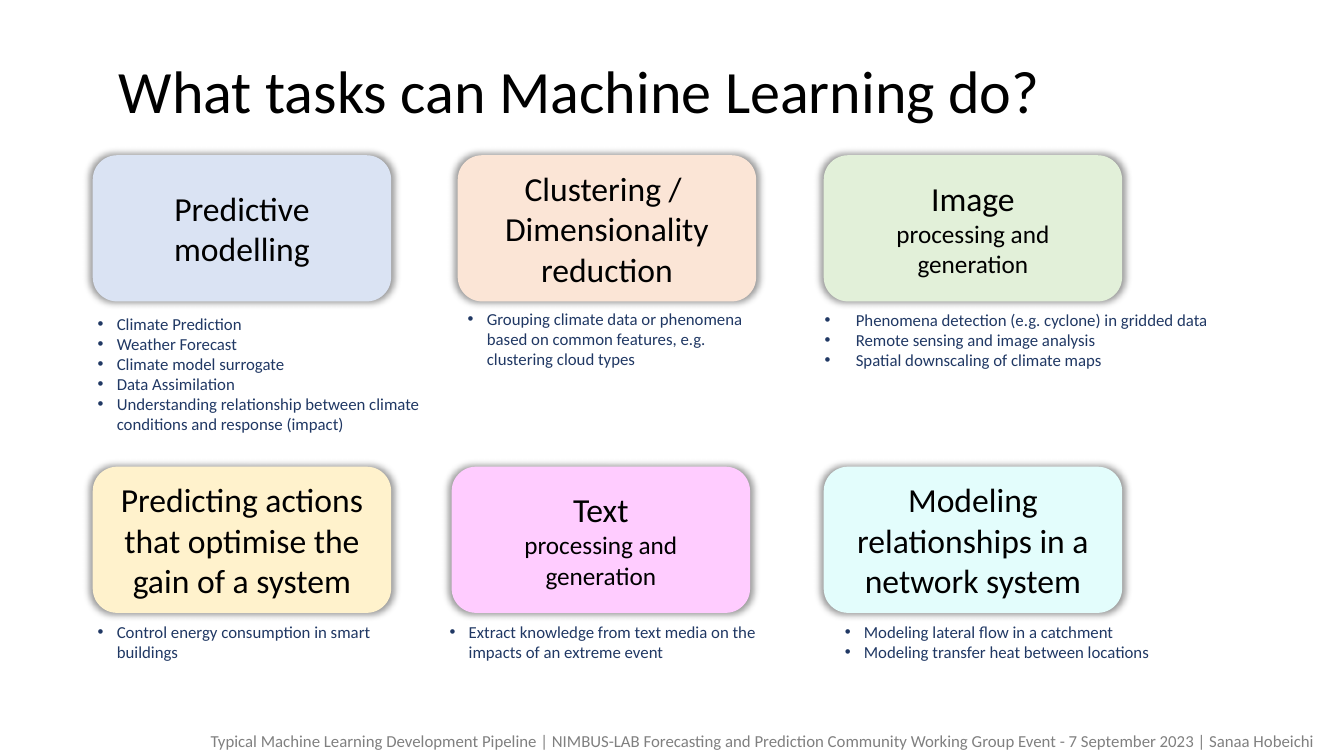
"""Build the slide on the tasks that machine learning can do."""
from dataclasses import dataclass

from lxml.etree import SubElement
from pptx import Presentation
from pptx.dml.color import RGBColor
from pptx.enum.shapes import MSO_SHAPE
from pptx.enum.text import MSO_ANCHOR, MSO_AUTO_SIZE, PP_ALIGN
from pptx.oxml.ns import qn
from pptx.util import Inches, Pt


@dataclass(frozen=True)
class Theme:
    """Fonts, type sizes and colours of the slide."""

    font: str = "Calibri"
    title_size: float = 42.9
    heading_size: float = 24
    subheading_size: float = 18
    small_size: float = 12
    ink: str = "000000"
    navy: str = "203864"
    grey: str = "808080"
    blue: str = "DAE3F3"
    peach: str = "FBE5D6"
    green: str = "E2F0D9"
    yellow: str = "FFF2CC"
    pink: str = "FFCCFF"
    cyan: str = "E3FDFC"


THEME = Theme()
CARD_W, CARD_H = 2.96, 1.45
TOP_ROW, BOTTOM_ROW = 1.54, 4.63
LEFT_COL, RIGHT_COL = 0.92, 8.17
BOTTOM_LIST = 6.12

TASKS = [
    {"card": (LEFT_COL, TOP_ROW), "fill": THEME.blue,
     "heading": ["Predictive modelling"],
     "list": (0.87, 3.06, 3.4, 1.31),
     "items": ["Climate Prediction", "Weather Forecast",
               "Climate model surrogate", "Data Assimilation",
               "Understanding relationship between climate conditions "
               "and response (impact)"]},
    {"card": (4.54, TOP_ROW), "fill": THEME.peach,
     "heading": ["Clustering / ", "Dimensionality reduction"],
     "list": (4.54, 3.01, 3.25, 0.71),
     "items": ["Grouping climate data or phenomena based on common "
               "features, e.g. clustering cloud types"]},
    {"card": (RIGHT_COL, TOP_ROW), "fill": THEME.green,
     "heading": ["Image"], "subheading": "processing and generation",
     "list": (8.08, 3.02, 4.23, 0.71), "indent": 0.31,
     "items": ["Phenomena detection (e.g. cyclone) in gridded data",
               "Remote sensing and image analysis",
               "Spatial downscaling of climate maps"]},
    {"card": (LEFT_COL, BOTTOM_ROW), "fill": THEME.yellow,
     "heading": ["Predicting actions that optimise the gain of a system"],
     "list": (0.87, BOTTOM_LIST, 3.09, 0.5),
     "items": ["Control energy consumption in smart buildings"]},
    {"card": (4.48, BOTTOM_ROW), "fill": THEME.pink,
     "heading": ["Text"], "subheading": "processing and generation",
     "list": (4.36, BOTTOM_LIST, 3.52, 0.5),
     "items": ["Extract knowledge from text media on the impacts of "
               "an extreme event"]},
    {"card": (RIGHT_COL, BOTTOM_ROW), "fill": THEME.cyan,
     "heading": ["Modeling relationships in a network system"],
     "list": (8.28, BOTTOM_LIST, 3.52, 0.5),
     "items": ["Modeling lateral flow in a catchment",
               "Modeling transfer heat between locations"]},
]


def write(tf, text, *, size, color, align=PP_ALIGN.LEFT, indent=None):
    """Add a formatted paragraph, bulleted if an indent is given."""
    p = tf.paragraphs[0]
    if p.runs:
        p = tf.add_paragraph()
    p.alignment = align
    r = p.add_run()
    r.text = text
    r.font.name = THEME.font
    r.font.size = Pt(size)
    r.font.color.rgb = RGBColor.from_string(color)
    if indent:
        pPr = p._p.get_or_add_pPr()
        pPr.set("marL", str(Inches(indent)))
        pPr.set("indent", str(-Inches(indent)))
        SubElement(pPr, qn("a:buFont"), typeface="Arial")
        SubElement(pPr, qn("a:buChar"), char="•")
    return p


class SlideBuilder:
    """Draws themed elements on one slide."""

    def __init__(self, slide, theme):
        """Keep the slide and its theme."""
        self.s, self.theme = slide, theme

    def title(self, text, box):
        """Fill and place the title placeholder."""
        sp = self.s.shapes.title
        sp.left, sp.top, sp.width, sp.height = map(Inches, box)
        tf = sp.text_frame
        tf.auto_size = MSO_AUTO_SIZE.NONE
        tf.vertical_anchor = MSO_ANCHOR.MIDDLE
        p = write(tf, text, size=self.theme.title_size, color=self.theme.ink)
        p.line_spacing = 0.9

    def card(self, position, fill, heading, subheading=None):
        """Draw a rounded card with a soft halo and a centred heading."""
        sp = self.s.shapes.add_shape(
            MSO_SHAPE.ROUNDED_RECTANGLE,
            *map(Inches, (*position, CARD_W, CARD_H)))
        sp.fill.solid()
        sp.fill.fore_color.rgb = RGBColor.from_string(fill)
        sp.line.fill.background()
        self.halo(sp)
        tf = sp.text_frame
        tf.word_wrap = True
        tf.vertical_anchor = MSO_ANCHOR.MIDDLE
        style = {"color": self.theme.ink, "align": PP_ALIGN.CENTER}
        for text in heading:
            write(tf, text, size=self.theme.heading_size, **style)
        if subheading:
            write(tf, subheading, size=self.theme.subheading_size, **style)

    def halo(self, sp):
        """Give a shape an even, blurred shadow."""
        sp.shadow.inherit = False
        effects = sp._element.spPr.find(qn("a:effectLst"))
        shadow = SubElement(effects, qn("a:outerShdw"), blurRad="63500",
                            sx="102000", sy="102000", algn="ctr",
                            rotWithShape="0")
        black = SubElement(shadow, qn("a:prstClr"), val="black")
        SubElement(black, qn("a:alpha"), val="40000")

    def text(self, lines, box, color, indent=None):
        """Add a box of small text, bulleted if an indent is given."""
        sp = self.s.shapes.add_textbox(*map(Inches, box))
        tf = sp.text_frame
        tf.word_wrap = True
        tf.auto_size = MSO_AUTO_SIZE.SHAPE_TO_FIT_TEXT
        for line in lines:
            write(tf, line, size=self.theme.small_size, color=color,
                  indent=indent)


def main():
    """Build and save the slide."""
    prs = Presentation()
    prs.slide_width, prs.slide_height = Inches(13.33), Inches(7.5)
    s = prs.slides.add_slide(prs.slide_layouts.get_by_name("Title Only"))
    builder = SlideBuilder(s, THEME)
    builder.title("What tasks can Machine Learning do?",
                  (1.08, 0.57, 11.5, 0.72))
    for task in TASKS:
        builder.card(task["card"], task["fill"], task["heading"],
                     task.get("subheading"))
        builder.text(task["items"], task["list"], THEME.navy,
                     task.get("indent", 0.19))
    builder.text(["Typical Machine Learning Development Pipeline | "
                  "NIMBUS-LAB Forecasting and Prediction Community Working "
                  "Group Event - 7 September 2023 | Sanaa Hobeichi"],
                 (1.99, 7.2, 11.34, 0.3), THEME.grey)
    prs.save("out.pptx")


if __name__ == "__main__":
    main()
